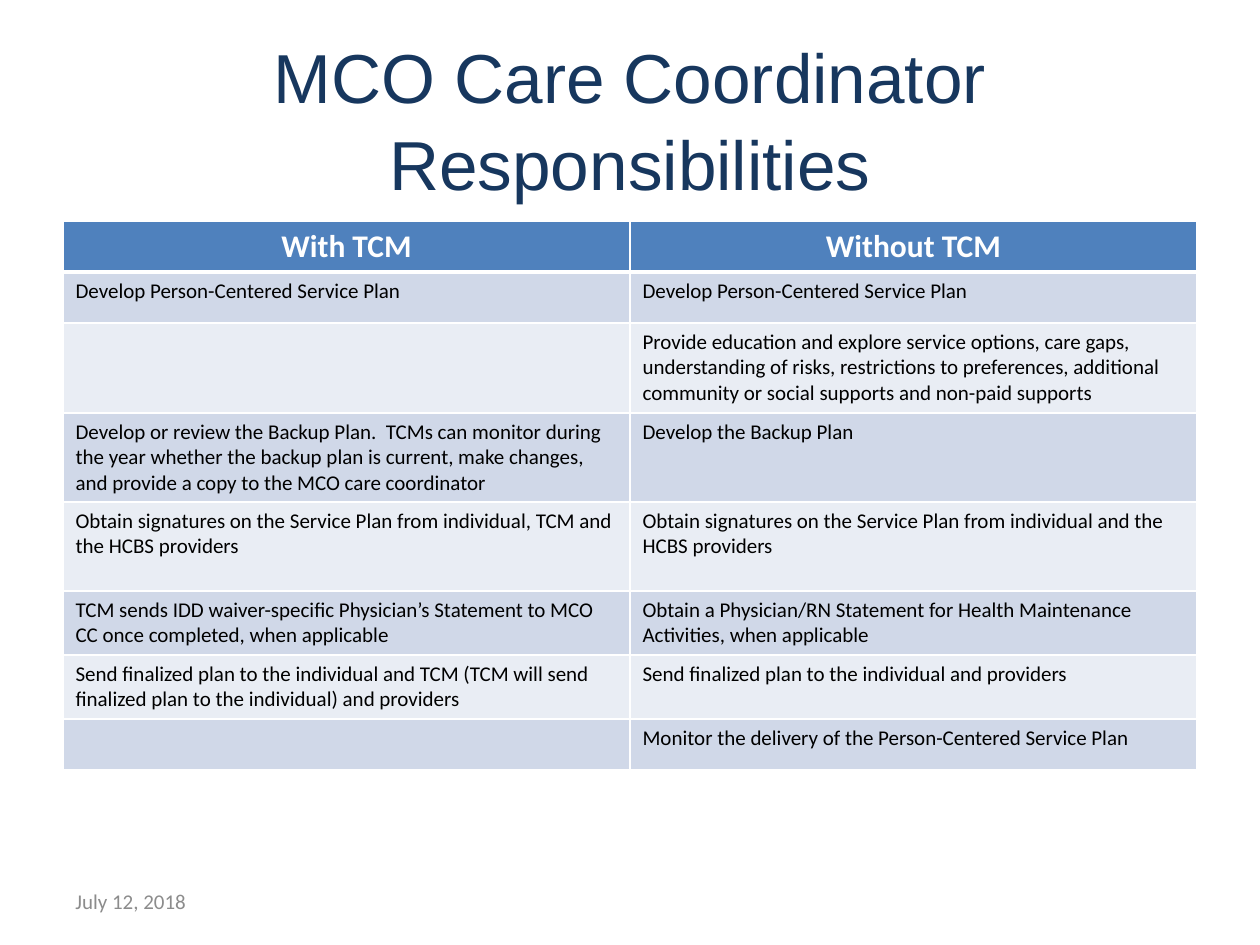
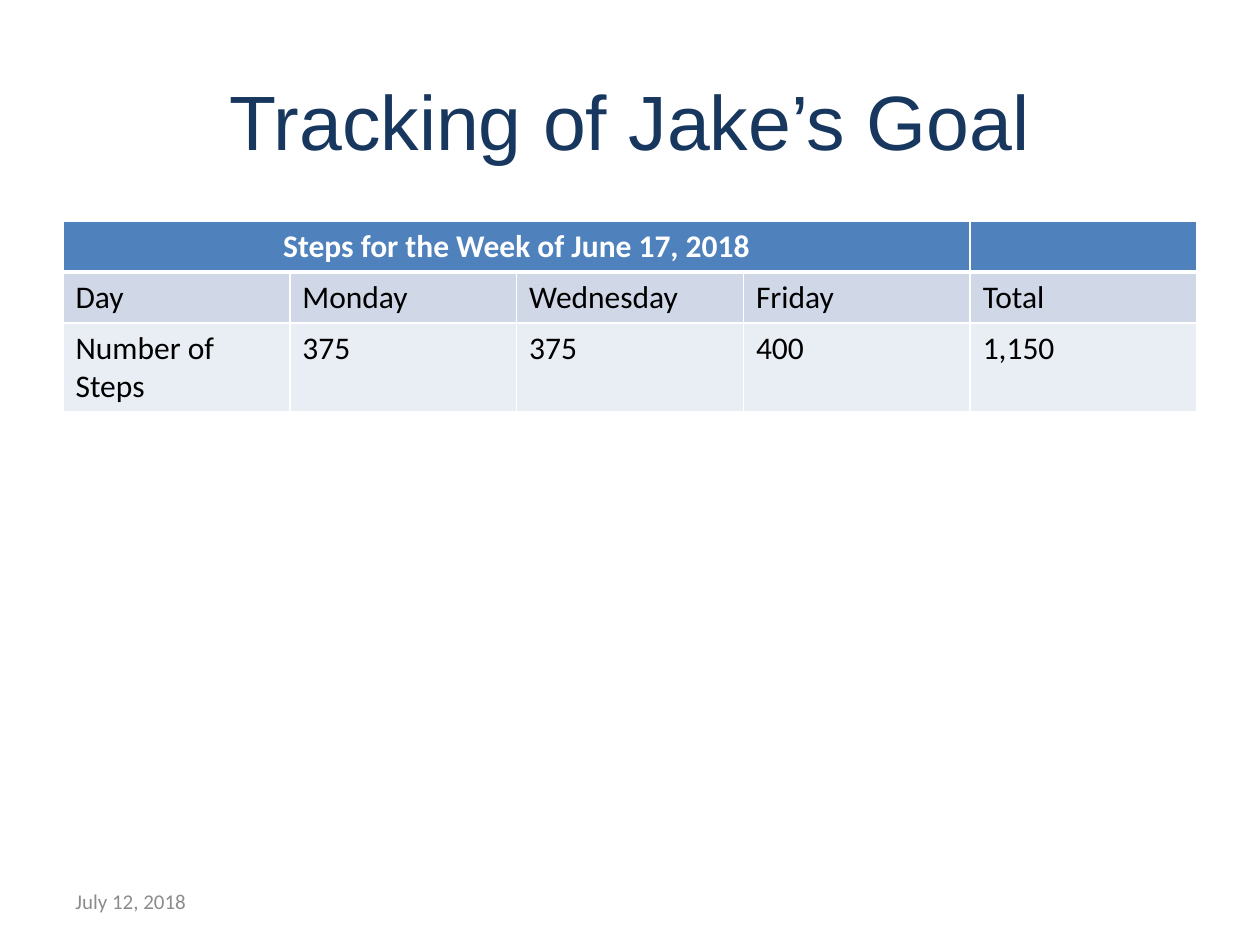
from dataclasses import dataclass

from lxml import etree
from pptx import Presentation
from pptx.dml.color import RGBColor
from pptx.enum.text import MSO_ANCHOR, PP_ALIGN
from pptx.oxml.ns import qn
from pptx.util import Emu, Pt

CENTER, LEFT = PP_ALIGN.CENTER, PP_ALIGN.LEFT
MIDDLE = MSO_ANCHOR.MIDDLE

PX_PER_INCH = 126
NAVY, GRAY, BLACK, WHITE = "17375E", "8C8C8C", "000000", "FFFFFF"
HEADER_FILL = "4F81BD"
BAND_FILLS = ("D0D8E8", "E9EDF4")
MARGIN, CONTENT_W = 63, 1134
TABLE_TOP = 221
DATE = "July 12, 2018"


@dataclass(frozen=True)
class TextStyle:
    font: str
    size: float
    color: str
    align: int = LEFT
    bold: bool = False
    spacing: float = 1.0


@dataclass(frozen=True)
class TableSlide:
    title: str
    title_size: float
    rows: list[list[str]]
    heights: list[int]
    body_size: int
    header_span: int = 1


HEADER_STYLE = TextStyle("Calibri", 18, WHITE, CENTER, True)
DATE_STYLE = TextStyle("Calibri", 12, GRAY)

SLIDES = [
    TableSlide(
        "MCO Care Coordinator Responsibilities", 39.6,
        [
            ["With TCM", "Without TCM"],
            ["Develop Person-Centered Service Plan",
             "Develop Person-Centered Service Plan"],
            ["",
             "Provide education and explore service options, care gaps, "
             "understanding of risks, restrictions to preferences, additional "
             "community or social supports and non-paid supports"],
            ["Develop or review the Backup Plan.  TCMs can monitor during the year "
             "whether the backup plan is current, make changes, and provide a copy "
             "to the MCO care coordinator",
             "Develop the Backup Plan"],
            ["Obtain signatures on the Service Plan from individual, TCM and the "
             "HCBS providers",
             "Obtain signatures on the Service Plan from individual and the HCBS "
             "providers"],
            ["TCM sends IDD waiver-specific Physician’s Statement to MCO CC once "
             "completed, when applicable",
             "Obtain a Physician/RN Statement for Health Maintenance Activities, "
             "when applicable"],
            ["Send finalized plan to the individual and TCM (TCM will send "
             "finalized plan to the individual) and providers",
             "Send finalized plan to the individual and providers"],
            ["", "Monitor the delivery of the Person-Centered Service Plan"],
        ],
        [51, 51, 90, 89, 89, 64, 64, 51], 12),
    TableSlide(
        "Tracking of Jake’s Goal", 44,
        [
            ["Steps for the Week of June 17, 2018", "", "", "", ""],
            ["Day", "Monday", "Wednesday", "Friday", "Total"],
            ["Number of Steps", "375", "375", "400", "1,150"],
        ],
        [51, 51, 89], 18, header_span=4),
]


def px(n: float) -> Emu:
    return Emu(round(n * 914400 / PX_PER_INCH))


def rgb(color: str) -> RGBColor:
    return RGBColor.from_string(color)


def write(tf, text: str, style: TextStyle) -> None:
    tf.text = text
    p = tf.paragraphs[0]
    p.alignment = style.align
    p.line_spacing = style.spacing
    for r in p.runs:
        r.font.name = style.font
        r.font.size = Pt(style.size)
        r.font.bold = style.bold
        r.font.color.rgb = rgb(style.color)


def add_text(s, left: int, top: int, width: int, height: int,
             text: str, style: TextStyle) -> None:
    tf = s.shapes.add_textbox(px(left), px(top), px(width), px(height)).text_frame
    tf.word_wrap = True
    tf.vertical_anchor = MIDDLE
    write(tf, text, style)


def set_borders(cell, row: int) -> None:
    widths = {"L": 1, "R": 1, "T": 3 if row == 1 else 1, "B": 3 if row == 0 else 1}
    tc_pr = cell._tc.get_or_add_tcPr()
    for side, width in widths.items():
        ln = etree.SubElement(tc_pr, qn(f"a:ln{side}"), w=str(Pt(width)))
        fill = etree.SubElement(ln, qn("a:solidFill"))
        etree.SubElement(fill, qn("a:srgbClr"), val=WHITE)


def add_table(s, content: TableSlide) -> None:
    n_rows, n_cols = len(content.rows), len(content.rows[0])
    table = s.shapes.add_table(n_rows, n_cols, px(MARGIN), px(TABLE_TOP),
                               px(CONTENT_W), px(sum(content.heights))).table
    for column in table.columns:
        column.width = px(CONTENT_W / n_cols)
    body_style = TextStyle("Calibri", content.body_size, BLACK)
    for i, (texts, height) in enumerate(zip(content.rows, content.heights)):
        table.rows[i].height = px(height)
        for j, text in enumerate(texts):
            cell = table.cell(i, j)
            set_borders(cell, i)
            cell.fill.solid()
            cell.fill.fore_color.rgb = rgb(BAND_FILLS[(i - 1) % 2] if i else HEADER_FILL)
            write(cell.text_frame, text, body_style if i else HEADER_STYLE)
    if content.header_span > 1:
        table.cell(0, 0).merge(table.cell(0, content.header_span - 1))


def add_slide(prs, content: TableSlide) -> None:
    s = prs.slides.add_slide(prs.slide_layouts[6])
    title_style = TextStyle("Arial", content.title_size, NAVY, CENTER, spacing=1.05)
    add_text(s, MARGIN, 38, CONTENT_W, 158, content.title, title_style)
    add_table(s, content)
    add_text(s, MARGIN, 876, 294, 50, DATE, DATE_STYLE)


def main() -> None:
    prs = Presentation()
    prs.slide_width, prs.slide_height = px(1260), px(945)
    for content in SLIDES:
        add_slide(prs, content)
    prs.save("out.pptx")


if __name__ == "__main__":
    main()
